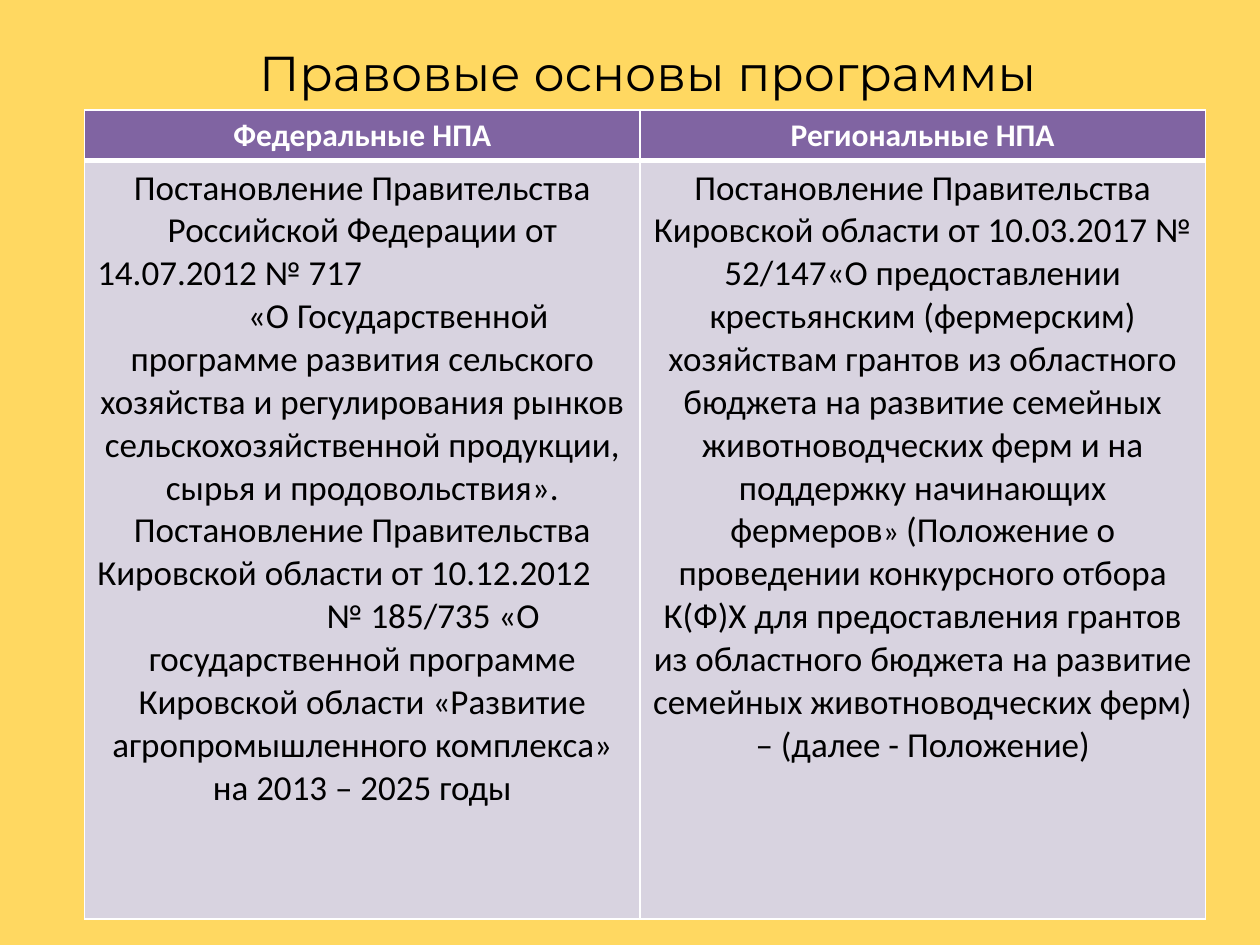
from lxml.etree import SubElement
from pptx import Presentation
from pptx.dml.color import RGBColor
from pptx.enum.text import MSO_AUTO_SIZE, PP_ALIGN
from pptx.oxml.ns import qn
from pptx.util import Pt

YELLOW = RGBColor(0xFF, 0xD8, 0x61)
PURPLE = RGBColor(0x80, 0x64, 0xA2)
LILAC = RGBColor(0xD8, 0xD3, 0xE0)
WHITE = RGBColor(0xFF, 0xFF, 0xFF)
BLACK = RGBColor(0x00, 0x00, 0x00)

TITLE = {"name": "Montserrat", "size": Pt(28), "color": BLACK}
HEADER = {"name": "Calibri", "size": Pt(18), "bold": True, "color": WHITE}
BODY = {"name": "Calibri", "size": Pt(20), "bold": False, "color": BLACK}
SMALL = {**BODY, "size": Pt(18)}

CENTER, LEFT = PP_ALIGN.CENTER, PP_ALIGN.LEFT

# Each paragraph: alignment, first-line indent in points, runs of (text, format)
FEDERAL_ACTS = [
    (CENTER, 0, [("Постановление Правительства", BODY)]),
    (CENTER, 0, [("Российской Федерации от", BODY)]),
    (LEFT, 0, [("14.07.2012 № 717", BODY)]),
    (CENTER, 41, [("«О Государственной программе развития сельского хозяйства и "
                   "регулирования рынков сельскохозяйственной продукции, сырья и "
                   "продовольствия».", BODY)]),
    (CENTER, 0, [("Постановление Правительства", BODY)]),
    (LEFT, 0, [("Кировской области от 10.12.2012", BODY)]),
    (CENTER, 81, [("№ 185/735 «О государственной программе Кировской области "
                   "«Развитие агропромышленного комплекса» на 2013 – 2025 годы", BODY)]),
]
REGIONAL_ACTS = [
    (CENTER, 0, [
        ("Постановление Правительства Кировской области от 10.03.2017 № 52/147«О "
         "предоставлении крестьянским (фермерским) хозяйствам грантов из областного "
         "бюджета на развитие семейных животноводческих ферм и на поддержку "
         "начинающих фермеров", BODY),
        ("» ", SMALL),
        ("(Положение о проведении конкурсного отбора К(Ф)Х для предоставления грантов "
         "из областного бюджета на развитие семейных животноводческих ферм) – "
         "(далее - Положение)", BODY),
    ]),
]


def heading(text, style):
    return [(CENTER, 0, [(text, style)])]


class SlideBuilder:
    def __init__(self, presentation, background):
        self.slide = presentation.slides.add_slide(presentation.slide_layouts[6])
        self.slide.background.fill.solid()
        self.slide.background.fill.fore_color.rgb = background

    def add_text(self, text_frame, paragraphs):
        for index, (alignment, indent, runs) in enumerate(paragraphs):
            paragraph = text_frame.paragraphs[0] if index == 0 else text_frame.add_paragraph()
            paragraph.alignment = alignment
            if indent:
                paragraph._p.get_or_add_pPr().set("indent", str(Pt(indent)))
            for text, style in runs:
                run = paragraph.add_run()
                run.text = text
                for name, value in style.items():
                    if name == "color":
                        run.font.color.rgb = value
                    else:
                        setattr(run.font, name, value)

    def text_box(self, left, top, width, height, paragraphs):
        shape = self.slide.shapes.add_textbox(Pt(left), Pt(top), Pt(width), Pt(height))
        shape.text_frame.word_wrap = True
        shape.text_frame.auto_size = MSO_AUTO_SIZE.SHAPE_TO_FIT_TEXT
        self.add_text(shape.text_frame, paragraphs)

    def border(self, cell, top_width, bottom_width):
        """Outline a cell in white; call before its fill is set."""
        properties = cell._tc.get_or_add_tcPr()
        for side, width in (("L", 1), ("R", 1), ("T", top_width), ("B", bottom_width)):
            line = SubElement(properties, qn(f"a:ln{side}"), w=str(Pt(width)))
            fill = SubElement(line, qn("a:solidFill"))
            SubElement(fill, qn("a:srgbClr"), val=str(WHITE))

    def table(self, left, top, column_widths, row_heights, rows):
        """Each row is (fill, (top, bottom) border widths, cell contents)."""
        frame = self.slide.shapes.add_table(
            len(row_heights), len(column_widths), Pt(left), Pt(top),
            Pt(sum(column_widths)), Pt(sum(row_heights)))
        table = frame.table
        for column, width in zip(table.columns, column_widths):
            column.width = Pt(width)
        for row, height, (fill, border_widths, contents) in zip(table.rows, row_heights, rows):
            row.height = Pt(height)
            for cell, paragraphs in zip(row.cells, contents):
                self.border(cell, *border_widths)
                cell.fill.solid()
                cell.fill.fore_color.rgb = fill
                self.add_text(cell.text_frame, paragraphs)


def main():
    presentation = Presentation()
    presentation.slide_width, presentation.slide_height = Pt(720), Pt(540)
    builder = SlideBuilder(presentation, YELLOW)
    builder.text_box(123.5, 21, 493, 41, heading("Правовые основы программы", TITLE))
    builder.table(48.4, 62.8, [317.4, 323], [28.8, 433.4], [
        (PURPLE, (1, 3), [heading("Федеральные НПА", HEADER),
                          heading("Региональные НПА", HEADER)]),
        (LILAC, (3, 1), [FEDERAL_ACTS, REGIONAL_ACTS]),
    ])
    presentation.save("out.pptx")


if __name__ == "__main__":
    main()
